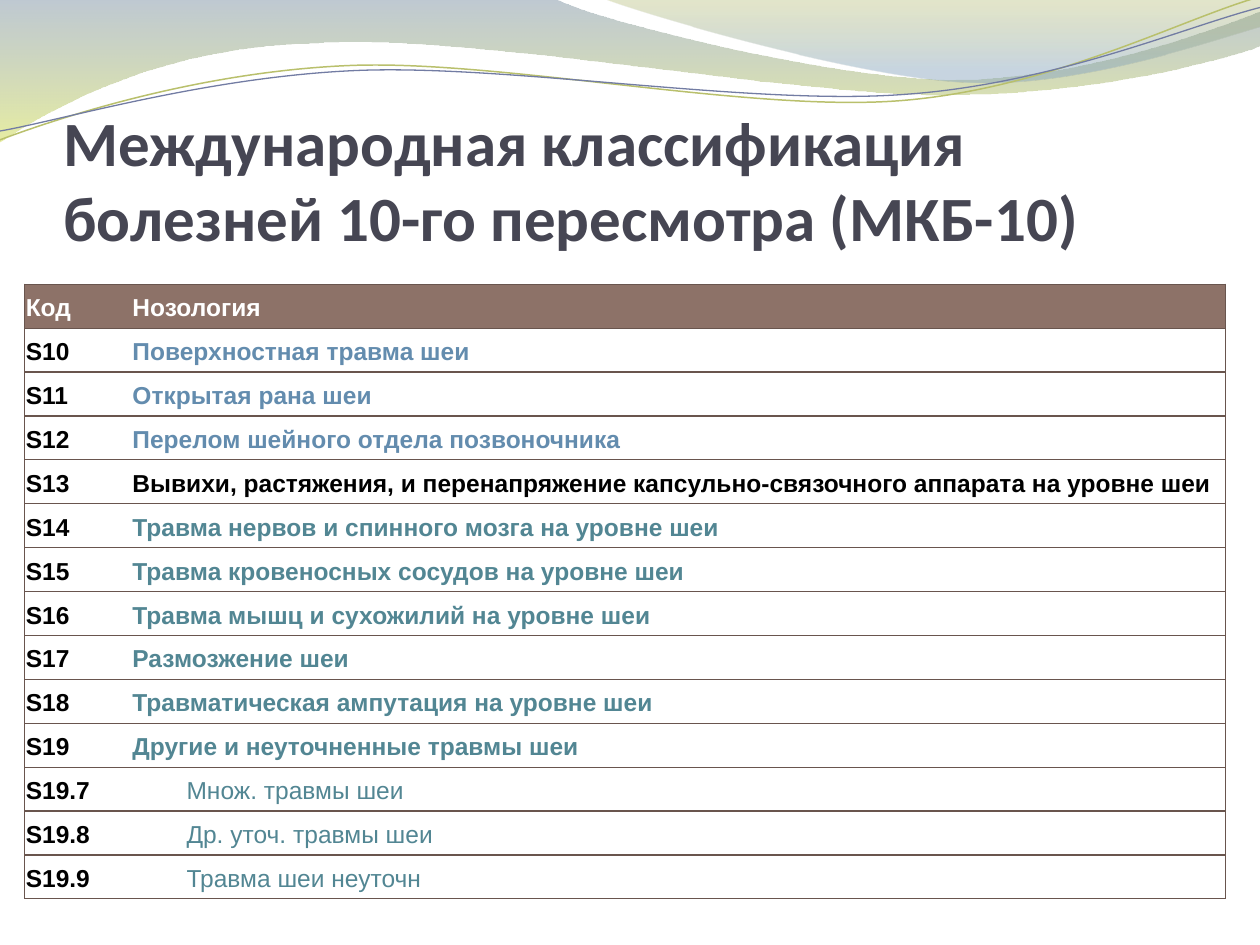
from math import cos, radians, sin

from lxml.etree import SubElement
from pptx import Presentation
from pptx.dml.color import RGBColor
from pptx.enum.text import MSO_ANCHOR
from pptx.oxml import parse_xml
from pptx.oxml.ns import nsdecls, qn
from pptx.util import Cm, Pt

INCH = 2.54
BROWN, BORDER, BLACK = "8D7268", "69554E", "000000"
BLUE, TEAL = "638CAE", "528693"

TITLE = "Международная классификация болезней 10-го пересмотра (МКБ-10)"
HEADER = ("Код", "Нозология")
# code, name, colour of the name, whether it is a subentry
DISEASES = [
    ("S10", "Поверхностная травма шеи", BLUE, False),
    ("S11", "Открытая рана шеи", BLUE, False),
    ("S12", "Перелом шейного отдела позвоночника", BLUE, False),
    ("S13", "Вывихи, растяжения, и перенапряжение капсульно-связочного "
            "аппарата на уровне шеи", BLACK, False),
    ("S14", "Травма нервов и спинного мозга на уровне шеи", TEAL, False),
    ("S15", "Травма кровеносных сосудов на уровне шеи", TEAL, False),
    ("S16", "Травма мышц и сухожилий на уровне шеи", TEAL, False),
    ("S17", "Размозжение шеи", TEAL, False),
    ("S18", "Травматическая ампутация на уровне шеи", TEAL, False),
    ("S19", "Другие и неуточненные травмы шеи", TEAL, False),
    ("S19.7", "Множ. травмы шеи", TEAL, True),
    ("S19.8", "Др. уточ. травмы шеи", TEAL, True),
    ("S19.9", "Травма шеи неуточн", TEAL, True),
]

# Points in inches: a pair is a straight step, six numbers are a Bezier curve.
# Gradient stops: position %, colour, opacity %
WAVES = [
    ([(0, 0), (4.4, -0.01), (4.76, 0.17, 6.64, 0.63, 7.58, 0.63),
      (8.53, 0.63, 9.58, 0.26, 10, 0.09), (10.01, 0.36),
      (9.83, 0.44, 8.7, 0.76, 7.46, 0.75), (6.22, 0.75, 3.82, 0.28, 2.57, 0.34),
      (1.29, 0.36, 0.46, 0.83, -0.01, 1.13), (0, 0)],
     [(0, "72889B", 45), (100, "D3DE57", 55)]),
    ([(4.79, -0.01), (5.09, 0.11, 6.82, 0.62, 7.69, 0.65),
      (8.56, 0.69, 9.61, 0.32, 10, 0.21), (10, 0), (4.79, -0.01)],
     [(0, "A4AC50", 30), (80, "84A3BD", 45)]),
]
# Path as seen after turning, centre of the turn, colour, width
LINE_TURN = -2.7
WAVE_LINES = [
    ([(0, 1.11), (0.48, 0.93, 1.58, 0.57, 2.77, 0.52),
      (3.95, 0.47, 5.93, 0.89, 7.13, 0.8), (8.33, 0.71, 9.38, 0.15, 9.98, -0.02)],
     (4.99, 0.57), "B9C06C", 0.85),
    ([(0, 1.04), (0.47, 0.96, 1.64, 0.61, 2.83, 0.56),
      (4.03, 0.51, 5.97, 0.84, 7.17, 0.75), (8.36, 0.67, 9.41, 0.21, 10, 0.06)],
     (5, 0.59), "727CA3", 0.75),
]


def color(value):
    return RGBColor.from_string(value)


def turn(point, center, degrees):
    """Turn a point clockwise about a centre."""
    angle = radians(degrees)
    dx, dy = point[0] - center[0], point[1] - center[1]
    return (center[0] + dx * cos(angle) - dy * sin(angle),
            center[1] + dx * sin(angle) + dy * cos(angle))


def add_path(shapes, path, center=(0, 0), degrees=0):
    """Add a freeform whose six-number steps are true Bezier curves."""
    points = [turn(step[i:i + 2], center, -degrees)
              for step in path for i in range(0, len(step), 2)]
    points = [(Cm(x * INCH), Cm(y * INCH)) for x, y in points]
    builder = shapes.build_freeform(*points[0])
    builder.add_line_segments(points[1:], close=path[0] == path[-1])
    shape = builder.convert_to_shape()
    shape.rotation = degrees
    shape.shadow.inherit = False
    shape.fill.background()
    segments = iter(list(shape.element.iter(qn("a:lnTo"))))
    for step in path[1:]:
        segment = next(segments)
        if len(step) == 6:
            curve = SubElement(segment.getparent(), qn("a:cubicBezTo"))
            segment.addprevious(curve)
            for part in (segment, next(segments), next(segments)):
                curve.append(part[0])
                part.getparent().remove(part)
    return shape


def set_gradient(shape, stops):
    """Fill from top to bottom with partly transparent colours."""
    stop_xml = "".join(
        f'<a:gs pos="{position * 1000}"><a:srgbClr val="{value}">'
        f'<a:alpha val="{opacity * 1000}"/></a:srgbClr></a:gs>'
        for position, value, opacity in stops)
    gradient = parse_xml(f'<a:gradFill {nsdecls("a")} rotWithShape="1"><a:gsLst>{stop_xml}'
                         '</a:gsLst><a:lin ang="5400000" scaled="0"/></a:gradFill>')
    properties = shape.element.spPr
    properties.replace(properties.find(qn("a:noFill")), gradient)


def set_borders(cell, visible):
    """Draw the named sides (L, R, T, B) and hide the others."""
    properties = cell._tc.get_or_add_tcPr()
    for side in "LRTB":
        paint = (f'<a:solidFill><a:srgbClr val="{BORDER}"/></a:solidFill>'
                 if side in visible else "<a:noFill/>")
        properties.append(parse_xml(
            f'<a:ln{side} {nsdecls("a")} w="{Pt(0.75)}">{paint}</a:ln{side}>'))


def set_font(font, name, size, text_color, bold):
    font.name, font.size, font.bold = name, Pt(size), bold
    font.color.rgb = color(text_color)


def fill_cell(cell, text, text_color, bold=True, indent=0):
    cell.vertical_anchor = MSO_ANCHOR.MIDDLE
    cell.margin_left = cell.margin_right = Cm(0.02)
    cell.margin_top = cell.margin_bottom = Cm(0.02)
    cell.text_frame.text = text
    paragraph = cell.text_frame.paragraphs[0]
    paragraph.line_spacing = 1.15
    if indent:
        paragraph._p.get_or_add_pPr().set("marL", str(Cm(indent)))
    set_font(paragraph.runs[0].font, "Arial", 14, text_color, bold)


def add_disease_table(slide):
    row_count = len(DISEASES) + 1
    table = slide.shapes.add_table(row_count, 2, Cm(0.5), Cm(5.73),
                                   Cm(24.2), Cm(12.4)).table
    table.horz_banding = False
    table.columns[0].width, table.columns[1].width = Cm(2.15), Cm(22.05)
    for row in table.rows:
        row.height = Cm(12.4 / row_count)
    rows = [(*HEADER, "FFFFFF", False), *DISEASES]
    for index, (code, name, name_color, is_subentry) in enumerate(rows):
        code_cell, name_cell = table.rows[index].cells
        fill_cell(code_cell, code, BLACK if index else name_color)
        fill_cell(name_cell, name, name_color, not is_subentry, 1.09 if is_subentry else 0)
        for cell, outer_side in ((code_cell, "L"), (name_cell, "R")):
            set_borders(cell, outer_side + "TB")
            if index:
                cell.fill.background()
            else:
                cell.fill.solid()
                cell.fill.fore_color.rgb = color(BROWN)
                cell.text_frame.paragraphs[0].space_after = Pt(10)


def add_title(slide):
    frame = slide.shapes.add_textbox(Cm(1.28), Cm(1.95), Cm(22.86), Cm(3.18)).text_frame
    frame.word_wrap = True
    frame.vertical_anchor = MSO_ANCHOR.BOTTOM
    frame.margin_left = frame.margin_right = frame.margin_bottom = 0
    frame.text = TITLE
    set_font(frame.paragraphs[0].runs[0].font, "Calibri", 36, "464653", True)


def main():
    presentation = Presentation()
    presentation.slide_width, presentation.slide_height = Cm(25.4), Cm(19.05)
    slide = presentation.slides.add_slide(presentation.slide_layouts[6])
    for path, stops in WAVES:
        wave = add_path(slide.shapes, path)
        wave.line.fill.background()
        set_gradient(wave, stops)
    line_group = slide.shapes.add_group_shape()
    for path, center, line_color, width in WAVE_LINES:
        line = add_path(line_group.shapes, path, center, LINE_TURN).line
        line.color.rgb = color(line_color)
        line.width = Pt(width)
    add_title(slide)
    add_disease_table(slide)
    presentation.save("out.pptx")


if __name__ == "__main__":
    main()
